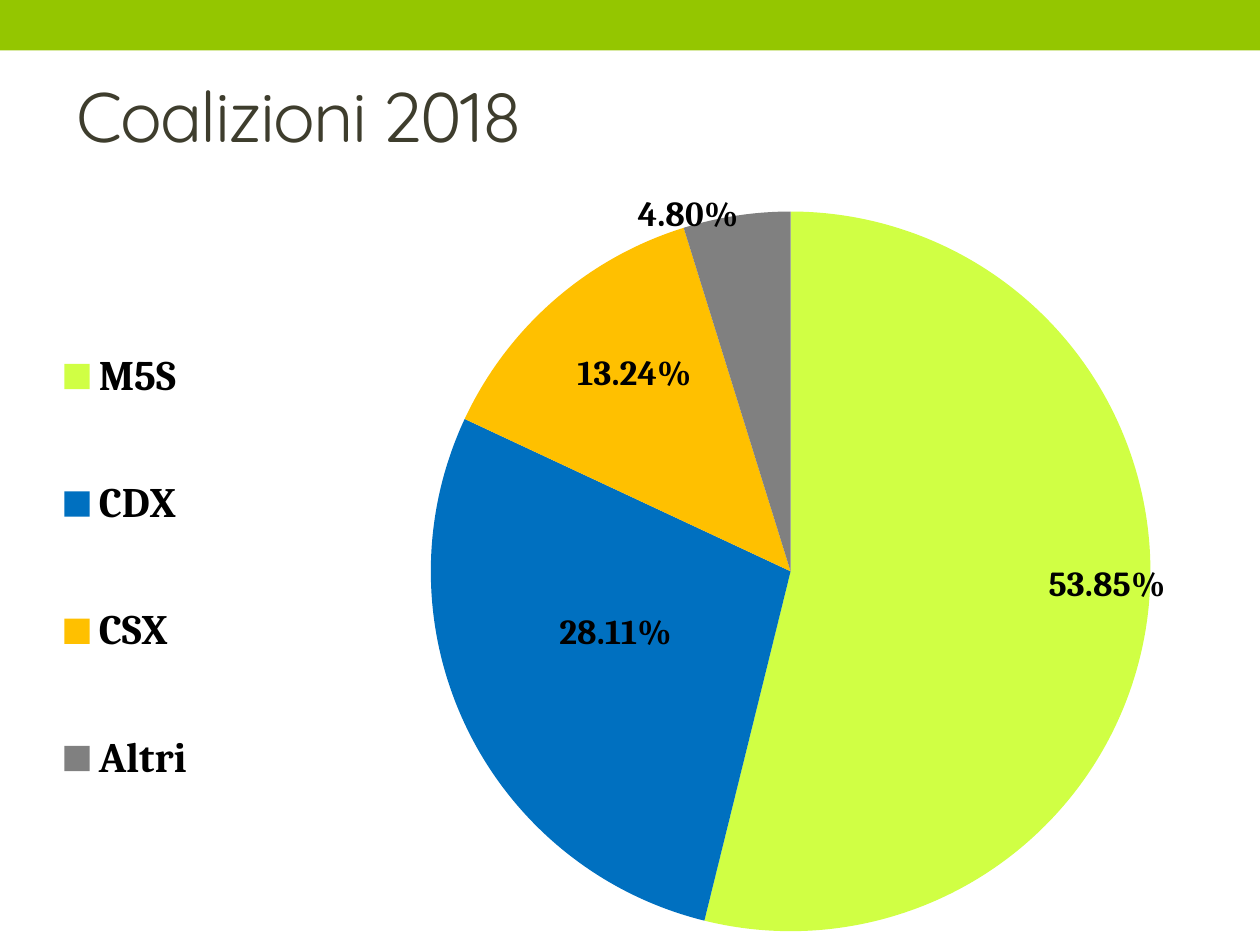
from lxml.etree import SubElement
from pptx import Presentation
from pptx.chart.data import CategoryChartData
from pptx.dml.color import RGBColor
from pptx.enum.chart import XL_CHART_TYPE, XL_LABEL_POSITION, XL_LEGEND_POSITION
from pptx.enum.shapes import MSO_SHAPE
from pptx.enum.text import MSO_ANCHOR, PP_ALIGN
from pptx.oxml.ns import qn
from pptx.util import Cm, Pt

GREEN = RGBColor(0x94, 0xC6, 0x00)
OLIVE = RGBColor(0x3E, 0x3D, 0x2D)
BLACK = RGBColor(0x00, 0x00, 0x00)
LIME = RGBColor(0xD0, 0xFF, 0x44)
BLUE = RGBColor(0x00, 0x70, 0xC0)
AMBER = RGBColor(0xFF, 0xC0, 0x00)
GREY = RGBColor(0x80, 0x80, 0x80)

# Coalition, share, slice colour, label offset from the slice centre
COALITIONS = [
    ("M5S", 0.5385, LIME, (0.11, -0.01)),
    ("CDX", 0.2811, BLUE, (-0.01, -0.02)),
    ("CSX", 0.1324, AMBER, (-0.03, -0.08)),
    ("Altri", 0.048, GREY, (-0.06, -0.23)),
]


def add_layout(parent, index, **settings):
    """Insert a manual chart layout as the child at the given index."""
    for old in parent.findall(qn("c:layout")):
        parent.remove(old)
    layout = SubElement(parent, qn("c:layout"))
    parent.insert(index, layout)
    manual = SubElement(layout, qn("c:manualLayout"))
    for name, value in settings.items():
        SubElement(manual, qn(f"c:{name}")).set("val", str(value))


class SlideBuilder:
    title_font = "Quicksand"
    chart_font = "Cambria"

    def __init__(self, slide):
        self.slide = slide

    def band(self, left, top, width, height, color):
        band = self.slide.shapes.add_shape(MSO_SHAPE.RECTANGLE, left, top, width, height)
        band.shadow.inherit = False
        band.fill.solid()
        band.fill.fore_color.rgb = color
        band.line.fill.background()

    def title(self, text, left, top, width, height):
        heading = self.slide.shapes.add_textbox(left, top, width, height)
        frame = heading.text_frame
        frame.word_wrap = True
        frame.vertical_anchor = MSO_ANCHOR.MIDDLE
        paragraph = frame.paragraphs[0]
        paragraph.text = text
        paragraph.alignment = PP_ALIGN.LEFT
        self.style(paragraph.font, 40, OLIVE, self.title_font)
        for properties in heading.element.iter(qn("a:defRPr")):
            properties.set("spc", "-100")

    def style(self, font, size, color, name, bold=False):
        font.size = Pt(size)
        font.color.rgb = color
        font.name = name
        font.bold = bold

    def pie(self, coalitions, left, top, width, height):
        shares = CategoryChartData(number_format="0.00%")
        shares.categories = [name for name, *_ in coalitions]
        shares.add_series("Series 1", [share for _, share, *_ in coalitions])
        chart = self.slide.shapes.add_chart(
            XL_CHART_TYPE.PIE, left, top, width, height, shares).chart
        chart.has_title = False
        self.style(chart.font, 18, BLACK, self.chart_font)
        plot = chart.plots[0]
        plot.vary_by_categories = True

        # Legend column on the left
        chart.has_legend = True
        legend = chart.legend
        legend.position = XL_LEGEND_POSITION.BOTTOM
        legend.include_in_layout = False
        self.style(legend.font, 24, BLACK, self.chart_font, bold=True)
        legend_xml = chart.element.find(".//" + qn("c:legend"))
        add_layout(legend_xml, 1, xMode="edge", yMode="edge",
                   x=0.03, y=0.14, w=0.14, h=0.76)

        # Pie area
        plot_area = chart.element.find(".//" + qn("c:plotArea"))
        add_layout(plot_area, 0, layoutTarget="inner", xMode="edge", yMode="edge",
                   x=0.34, y=0.06, w=0.58, h=0.93)

        # Slices and their labels
        series = plot.series[0]
        labels = series.data_labels
        labels.show_value = True
        labels.number_format = "0.00%"
        labels.number_format_is_linked = False
        labels.position = XL_LABEL_POSITION.CENTER
        self.style(labels.font, 20, BLACK, self.chart_font, bold=True)
        for index, (_, _, color, _) in enumerate(coalitions):
            point = series.points[index]
            point.format.fill.solid()
            point.format.fill.fore_color.rgb = color
            point.format.line.fill.background()
            label = point.data_label
            self.style(label.font, 20, BLACK, self.chart_font, bold=True)
            label.position = XL_LABEL_POSITION.CENTER
        for label_xml, (*_, (x, y)) in zip(chart.element.iter(qn("c:dLbl")), coalitions):
            add_layout(label_xml, 1, x=x, y=y)
        for leader in chart.element.iter(qn("c:showLeaderLines")):
            leader.set("val", "0")


def main():
    presentation = Presentation()
    presentation.slide_width = Cm(25.4)
    presentation.slide_height = Cm(19.05)
    builder = SlideBuilder(presentation.slides.add_slide(presentation.slide_layouts[6]))

    # Header
    builder.band(0, 0, presentation.slide_width, Cm(1.02), GREEN)
    builder.title("Coalizioni 2018", Cm(1.3), Cm(0.93), Cm(22.86), Cm(2.74))

    # Coalition shares
    builder.pie(COALITIONS, 0, Cm(3.33), Cm(25.3), Cm(15.6))

    presentation.save("out.pptx")


if __name__ == "__main__":
    main()
